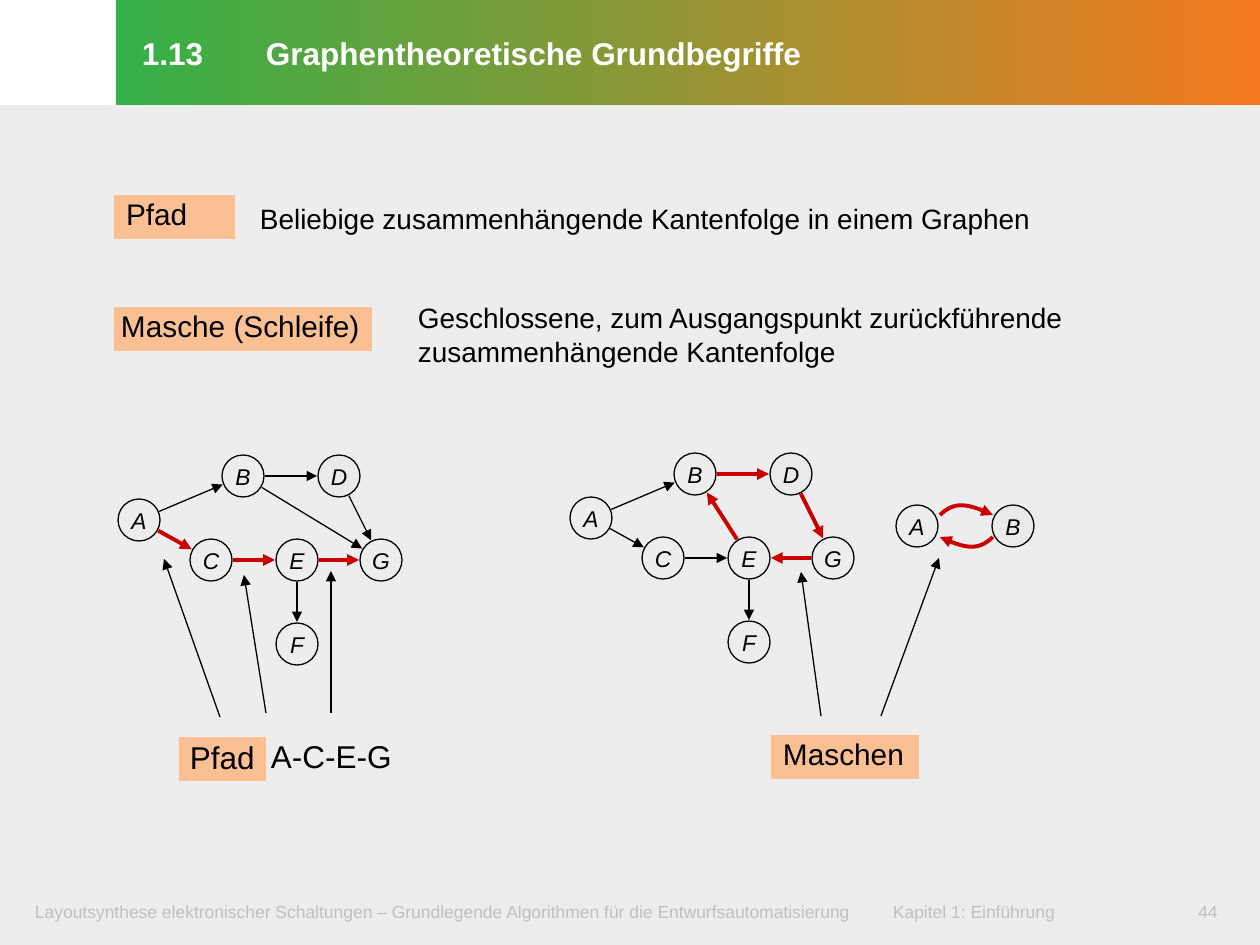
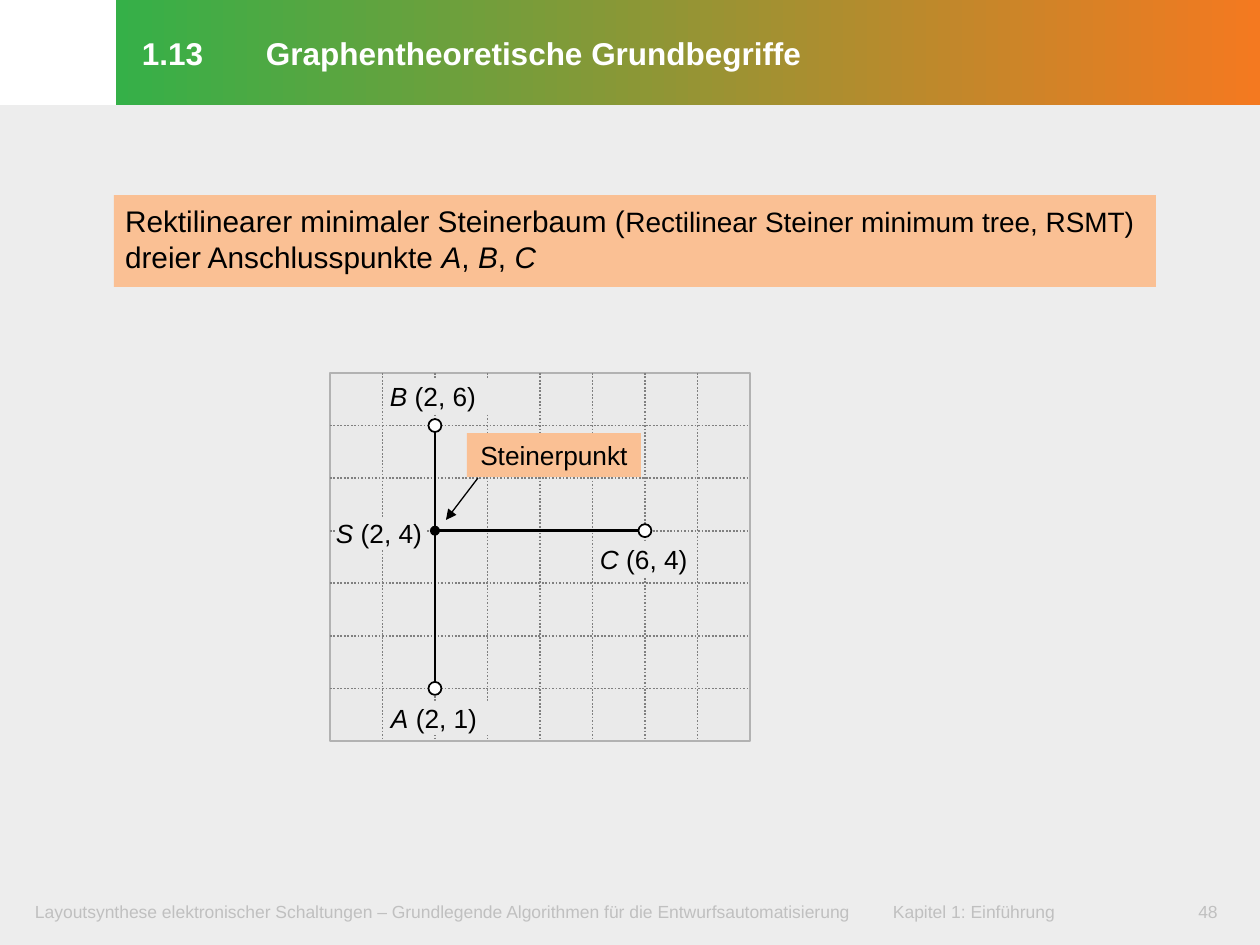
import math
from dataclasses import dataclass

from lxml import etree
from pptx import Presentation
from pptx import util as u
from pptx.dml.color import RGBColor
from pptx.enum import dml, shapes, text
from pptx.oxml import ns

PX_PER_INCH = 126


@dataclass(frozen=True)
class Theme:
    font: str = "Arial"
    black: str = "000000"
    white: str = "FFFFFF"
    page: str = "EDEDED"
    panel: str = "EAEAEA"
    border: str = "B2B2B2"
    grid: str = "808080"
    mark: str = "FAC094"
    red: str = "CC0000"
    footer: str = "C0C0C0"
    band: tuple = ("35B048", "F47920")
    title_pt: float = 18
    path_pt: float = 18
    term_pt: float = 17
    body_pt: float = 16
    point_pt: float = 15
    node_pt: float = 13
    footer_pt: float = 10
    thin: float = 0.75
    fine: float = 1
    tree: float = 1.5
    bold: float = 2.25


T = Theme()
MID, TOP = text.MSO_ANCHOR.MIDDLE, text.MSO_ANCHOR.TOP
LEFT, CENTER = text.PP_ALIGN.LEFT, text.PP_ALIGN.CENTER
RECT, OVAL = shapes.MSO_SHAPE.RECTANGLE, shapes.MSO_SHAPE.OVAL

# ---- Content (lengths in px) ----
TITLE = "1.13\tGraphentheoretische Grundbegriffe"
FOOTERS = [  # left, width, text
    (20, 850, "Layoutsynthese elektronischer Schaltungen – "
              "Grundlegende Algorithmen für die Entwurfsautomatisierung"),
    (878, 260, "Kapitel 1: Einführung"),
]

TERMS = [  # box, left inset, text, size
    ((114, 195, 121, 44), 12, "Pfad", T.term_pt),
    ((114, 307, 258, 44), 7, "Masche (Schleife)", T.term_pt),
    ((179, 737, 87, 44), 11, "Pfad", T.path_pt),
    ((771, 735, 148, 44), 12, "Maschen", T.term_pt),
]
EXPLANATIONS = [
    ((260, 202, 800, 34), "Beliebige zusammenhängende Kantenfolge in einem Graphen", T.body_pt),
    ((418, 301, 670, 68), "Geschlossene, zum Ausgangspunkt zurückführende "
                          "zusammenhängende Kantenfolge", T.body_pt),
    ((271, 737, 200, 38), "A-C-E-G", T.path_pt),
]

NODE = 42
NODES = {"A": (139, 520), "B": (243, 476), "C": (211, 560), "E": (297, 560),
         "F": (297, 644), "G": (381, 560), "D": (339, 476)}
PATH_GRAPH = dict(nodes=NODES, shift=(0, 0), filled="D",
                  plain="AB BD DG EF BG", red="AC CE EG")
MESH_GRAPH = dict(nodes=NODES, shift=(452, -2), filled="D",
                  plain="AB AC CE EF", red="BD DG GE EB")
LOOP_GRAPH = dict(nodes={"A": (917, 526), "B": (1013, 526)}, shift=(0, 0),
                  filled="B", plain="", red="")
LOOP_CENTER = (966.5, 526)
LOOP_CURVE = [(940, 515), (954, 502), (965, 502), (993, 515)]
POINTERS = [
    ((220, 717), (164, 559)), ((266, 713), (244, 575)), ((331, 713), (331, 571)),
    ((821, 716), (801, 572)), ((881, 716), (939, 558)),
]

STEINER_TEXT = [
    ("Rektilinearer minimaler Steinerbaum (", {}),
    ("Rectilinear Steiner minimum tree, RSMT) ", {"size": u.Pt(T.body_pt)}),
    ("dreier Anschlusspunkte ", {}),
    ("A", {"italic": True}), (", ", {}), ("B", {"italic": True}), (", ", {}),
    ("C", {"italic": True}),
]
GRID = dict(left=330, top=373, width=420, height=368, columns=8, rows=7)
POINTS = {"A": (2, 1), "B": (2, 6), "C": (6, 4), "S": (2, 4)}
POINT_LABELS = {"A": (391, 701, 97, 34), "B": (390, 379, 98, 34),
                "C": (600, 541, 94, 36), "S": (336, 519, 89, 29)}
TREE = ["BA", "SC"]


# ---- Drawing helpers ----
def px(n):
    return u.Inches(n / PX_PER_INCH)


def rgb(code):
    return RGBColor.from_string(code)


def write(sp, runs, size, color=T.black, align=LEFT, anchor=TOP,
          margins=(0, 0, 0, 0), wrap=True, **font):
    """Fill a shape with one paragraph; runs is a string or (text, font values) pairs."""
    tf = sp.text_frame
    frame = dict(zip(("margin_left", "margin_top", "margin_right", "margin_bottom"),
                     map(px, margins)))
    frame.update(word_wrap=wrap, vertical_anchor=anchor, auto_size=text.MSO_AUTO_SIZE.NONE)
    for name, value in frame.items():
        setattr(tf, name, value)
    p = tf.paragraphs[0]
    p.alignment = align
    for words, own in [(runs, {})] if isinstance(runs, str) else runs:
        r = p.add_run()
        r.text = words
        r.font.color.rgb = rgb(color)
        for name, value in {"name": T.font, "size": u.Pt(size), **font, **own}.items():
            setattr(r.font, name, value)
    return p


def add_text(s, box, runs, size, **fmt):
    return write(s.shapes.add_textbox(*map(px, box)), runs, size, **fmt)


def style_line(sp, color, width, arrow=False, dash=None):
    line = sp.line
    line.color.rgb = rgb(color)
    line.width = u.Pt(width)
    if dash:
        line.dash_style = dash
    if arrow:
        ln = sp._element.spPr.find(ns.qn("a:ln"))
        etree.SubElement(ln, ns.qn("a:tailEnd"), type="triangle")


def add_shape(s, kind, box, fill=None, line=None, width=T.thin):
    sp = s.shapes.add_shape(kind, *map(px, box))
    sp.shadow.inherit = False
    if fill:
        sp.fill.solid()
        sp.fill.fore_color.rgb = rgb(fill)
    else:
        sp.fill.background()
    if line:
        style_line(sp, line, width)
    else:
        sp.line.fill.background()
    return sp


def add_dot(s, center, size, **look):
    x, y = center
    return add_shape(s, OVAL, (x - size / 2, y - size / 2, size, size), **look)


def add_line(s, start, end, color=T.black, width=T.thin, **look):
    c = s.shapes.add_connector(shapes.MSO_CONNECTOR.STRAIGHT, *map(px, (*start, *end)))
    style_line(c, color, width, **look)
    etree.SubElement(c._element.spPr, ns.qn("a:effectLst"))


def add_curve(s, controls, steps=16):
    """Draw a red arrow along a cubic Bézier curve."""
    dots = []
    for i in range(steps + 1):
        t = i / steps
        weights = [math.comb(3, k) * t**k * (1 - t)**(3 - k) for k in range(4)]
        dots.append(tuple(px(sum(w * c[axis] for w, c in zip(weights, controls)))
                          for axis in (0, 1)))
    builder = s.shapes.build_freeform(*dots[0])
    builder.add_line_segments(dots[1:], close=False)
    sp = builder.convert_to_shape()
    sp.shadow.inherit = False
    sp.fill.background()
    style_line(sp, T.red, T.bold, arrow=True)


def add_graph(s, nodes, shift, filled, plain, red):
    """Draw the nodes, and edges that run from rim to rim."""
    centers = {n: (x + shift[0], y + shift[1]) for n, (x, y) in nodes.items()}
    for name, center in centers.items():
        sp = add_dot(s, center, NODE, fill=T.panel if name in filled else None, line=T.black)
        write(sp, name, T.node_pt, align=CENTER, anchor=MID, wrap=False, italic=True)
    for edges, color, width in ((plain, T.black, T.thin), (red, T.red, T.bold)):
        for a, b in edges.split():
            (ax, ay), (bx, by) = centers[a], centers[b]
            k = (NODE / 2 + 1) / math.dist(centers[a], centers[b])
            dx, dy = k * (bx - ax), k * (by - ay)
            add_line(s, (ax + dx, ay + dy), (bx - dx, by - dy), color, width, arrow=True)


def add_slide(prs, number):
    """Add a slide with the title band, grey page and footers."""
    s = prs.slides.add_slide(prs.slide_layouts[5])
    title = s.shapes.title
    for name, value in zip(("left", "top", "width", "height"), (116, 0, 1144, 105)):
        setattr(title, name, px(value))
    title.fill.gradient()
    title.fill.gradient_angle = 0
    for stop, color in zip(title.fill.gradient_stops, T.band):
        stop.color.rgb = rgb(color)
    p = write(title, TITLE, T.title_pt, color=T.white, anchor=MID,
              margins=(26, 6, 13, 9), bold=True)
    tabs = etree.SubElement(p._p.get_or_add_pPr(), ns.qn("a:tabLst"))
    etree.SubElement(tabs, ns.qn("a:tab"), pos=str(px(124)), algn="l")
    p.line_spacing = u.Pt(23.5)

    add_shape(s, RECT, (0, 105, 1260, 840), fill=T.page)
    footer = dict(color=T.footer, margins=(15, 8, 15, 8))
    for left, width, words in FOOTERS:
        add_text(s, (left, 893, width, 40), words, T.footer_pt, **footer)
    add_text(s, (1171, 893, 74, 40), str(number), T.footer_pt, align=CENTER, **footer)
    return s


# ---- Slides ----
def add_path_slide(prs):
    s = add_slide(prs, 44)
    for box, inset, words, size in TERMS:
        write(add_shape(s, RECT, box, fill=T.mark), words, size,
              margins=(inset, 1, 0, 0), wrap=False)
    for box, words, size in EXPLANATIONS:
        add_text(s, box, words, size)
    for graph in (PATH_GRAPH, MESH_GRAPH, LOOP_GRAPH):
        add_graph(s, **graph)
    cx, cy = LOOP_CENTER
    add_curve(s, LOOP_CURVE)
    add_curve(s, [(2 * cx - x, 2 * cy - y) for x, y in LOOP_CURVE])
    for start, end in POINTERS:
        add_line(s, start, end, arrow=True)


def add_steiner_slide(prs):
    s = add_slide(prs, 48)
    write(add_shape(s, RECT, (114, 195, 1042, 92), fill=T.mark), STEINER_TEXT,
          T.term_pt, margins=(11, 8, 0, 0))

    left, top, width, height, columns, rows = GRID.values()

    def at(x, y):
        return left + x * width / columns, top + height - y * height / rows

    add_shape(s, RECT, (left, top, width, height), fill=T.panel, line=T.border)
    dotted = dict(color=T.grid, width=T.fine, dash=dml.MSO_LINE.ROUND_DOT)
    for x in range(1, columns):
        add_line(s, at(x, rows), at(x, 0), **dotted)
    for y in range(1, rows):
        add_line(s, at(0, y), at(columns, y), **dotted)

    for name, box in POINT_LABELS.items():
        x, y = POINTS[name]
        write(add_shape(s, RECT, box, fill=T.panel),
              [(name, {"italic": True}), (f" ({x}, {y})", {})],
              T.point_pt, anchor=MID, wrap=False)
    for a, b in TREE:
        add_line(s, at(*POINTS[a]), at(*POINTS[b]), width=T.tree)
    for name, point in POINTS.items():
        if name == "S":
            add_dot(s, at(*point), 10, fill=T.black)
        else:
            add_dot(s, at(*point), 13, fill=T.white, line=T.black, width=T.fine)

    add_line(s, (478, 478), (446, 520), arrow=True)
    write(add_shape(s, RECT, (467, 433, 174, 44), fill=T.mark), "Steinerpunkt",
          T.point_pt, align=CENTER, anchor=MID, wrap=False)


def main():
    prs = Presentation()
    prs.slide_width, prs.slide_height = px(1260), px(945)
    add_path_slide(prs)
    add_steiner_slide(prs)
    prs.save("out.pptx")


if __name__ == "__main__":
    main()
